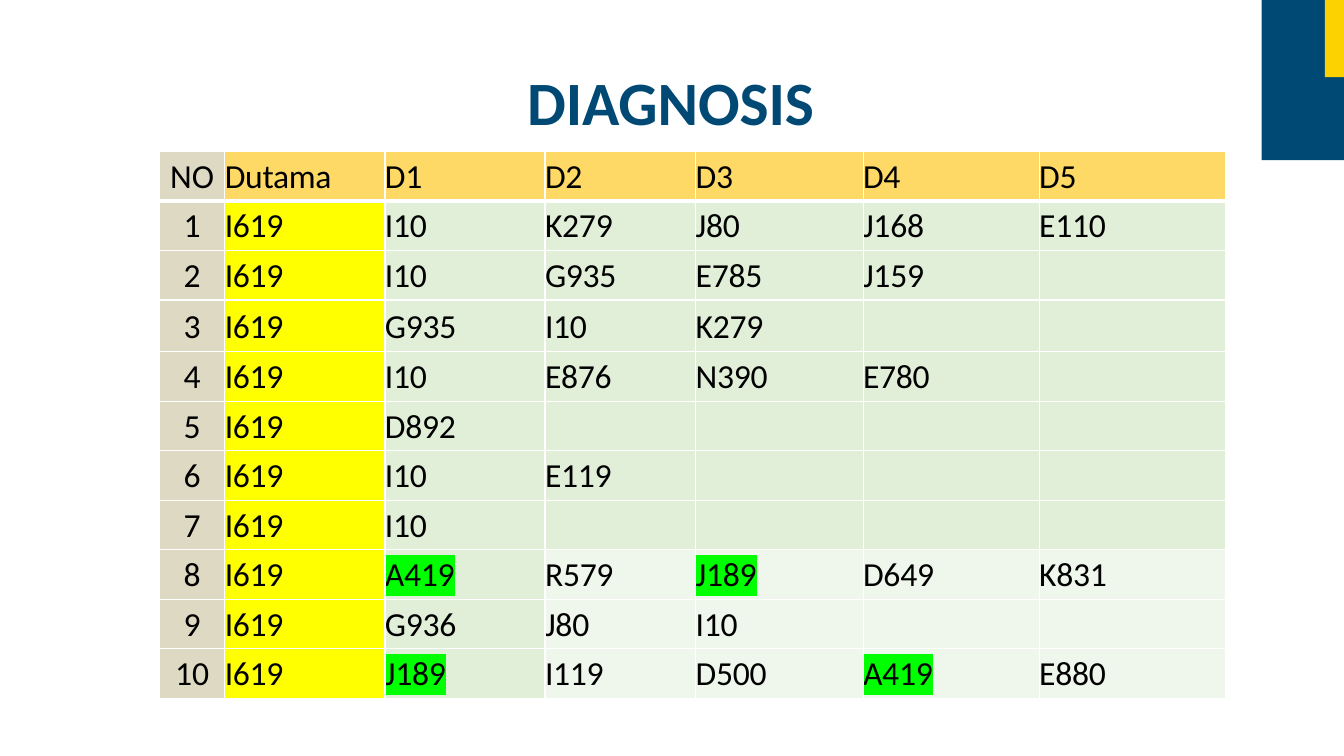
from lxml.etree import SubElement as Sub
from pptx import Presentation
from pptx.dml.color import RGBColor
from pptx.enum.shapes import MSO_SHAPE as Shape
from pptx.enum.text import PP_ALIGN as Align
from pptx.oxml.ns import qn
from pptx.util import Pt

NAVY = RGBColor(0x00, 0x49, 0x74)
GOLD = RGBColor(0xFC, 0xD2, 0x00)
SAND = RGBColor(0xDD, 0xD9, 0xC3)
AMBER = RGBColor(0xFF, 0xD9, 0x66)
YELLOW = RGBColor(0xFF, 0xFF, 0x00)
MINT = RGBColor(0xE1, 0xEF, 0xD9)
LIME = RGBColor(0x00, 0xFF, 0x00)
WHITE = RGBColor(0xFF, 0xFF, 0xFF)
BLACK = RGBColor(0x00, 0x00, 0x00)

WIDTHS = [46.6, 114.4, 114.4, 107.6, 119.6, 125.8, 133.2]
HEAD = ["NO", "Dutama", "D1", "D2", "D3", "D4", "D5"]
CODES = [
    "I10 K279 J80 J168 E110",
    "I10 G935 E785 J159",
    "G935 I10 K279",
    "I10 E876 N390 E780",
    "D892",
    "I10 E119",
    "I10",
    "A419 R579 J189 D649 K831",
    "G936 J80 I10",
    "J189 I119 D500 A419 E880",
]
MARKED = {"A419", "J189"}
TALL = 3
PALE = 8


class Deck:
    """Hold the style and the current slide, and draw each kind of element."""

    def __init__(self, face):
        self.face = face
        self.prs = Presentation()
        self.prs.slide_width, self.prs.slide_height = Pt(960), Pt(540)
        self.slide = self.prs.slides.add_slide(self.prs.slide_layouts[6])

    def block(self, x, y, w, h, color):
        box = self.slide.shapes.add_shape(Shape.RECTANGLE, Pt(x), Pt(y), Pt(w), Pt(h))
        box.shadow.inherit = False
        box.fill.solid()
        box.fill.fore_color.rgb = color
        box.line.fill.background()

    def label(self, para, text, size, color, bold=False, align=Align.LEFT, gap=0, mark=None):
        para.alignment = align
        font = para.font
        font.name, font.size, font.bold = self.face, Pt(size), bold
        font.color.rgb = color
        if text:
            run = para.add_run()
            run.text = text
            props = run._r.get_or_add_rPr()
            props.set("spc", str(gap))
            if mark:
                Sub(Sub(props, qn("a:highlight")), qn("a:srgbClr"), val=str(mark))

    def title(self, x, y, w, h, text):
        frame = self.slide.shapes.add_textbox(Pt(x), Pt(y), Pt(w), Pt(h)).text_frame
        frame.word_wrap = True
        frame.margin_left = frame.margin_right = frame.margin_bottom = 0
        frame.margin_top = Pt(1)
        self.label(frame.paragraphs[0], text, 44, NAVY, True, Align.CENTER, -10)

    def edge(self, cell, side, width):
        line = Sub(cell._tc.get_or_add_tcPr(), qn("a:ln" + side), w=str(Pt(width)))
        Sub(Sub(line, qn("a:solidFill")), qn("a:srgbClr"), val=str(WHITE))

    def cell(self, cell, row, col, text):
        cell.margin_left = cell.margin_right = cell.margin_bottom = 0
        cell.margin_top = Pt(5 if row == TALL else 3.6)
        for side in "LRTB":
            thick = (row, side) in {(0, "B"), (1, "T")}
            self.edge(cell, side, 3 if thick else 1)
        color = SAND if col == 0 else AMBER if row == 0 else YELLOW if col == 1 else MINT
        cell.fill.solid()
        cell.fill.fore_color.rgb = color
        if row >= PALE and col > 2:
            tint = cell._tc.tcPr.find(qn("a:solidFill"))[0]
            Sub(tint, qn("a:alpha"), val="50000")
        self.label(
            cell.text_frame.paragraphs[0], text, 24, BLACK,
            align=Align.LEFT if col else Align.CENTER,
            gap=-20 if col else 0,
            mark=LIME if text in MARKED else None,
        )

    def table(self, x, y, widths, rows):
        heights = [36.9 if i == TALL else 35.4 for i in range(len(rows))]
        grid = self.slide.shapes.add_table(
            len(rows), len(widths), Pt(x), Pt(y), Pt(sum(widths)), Pt(sum(heights))
        ).table
        grid.first_row = grid.horz_banding = False
        for column, width in zip(grid.columns, widths):
            column.width = Pt(width)
        for r, (row, height) in enumerate(zip(rows, heights)):
            grid.rows[r].height = Pt(height)
            for c in range(len(widths)):
                self.cell(grid.cell(r, c), r, c, row[c] if c < len(row) else "")


def main():
    deck = Deck("Calibri")
    rows = [[str(n), "I619", *codes.split()] for n, codes in enumerate(CODES, 1)]
    deck.table(114, 108.2, WIDTHS, [HEAD, *rows])
    deck.title(375, 44.6, 208, 54.7, "DIAGNOSIS")
    deck.block(901.2, 0, 58.8, 114.5, NAVY)
    deck.block(946.4, 0, 13.6, 55.2, GOLD)
    deck.prs.save("out.pptx")


if __name__ == "__main__":
    main()
